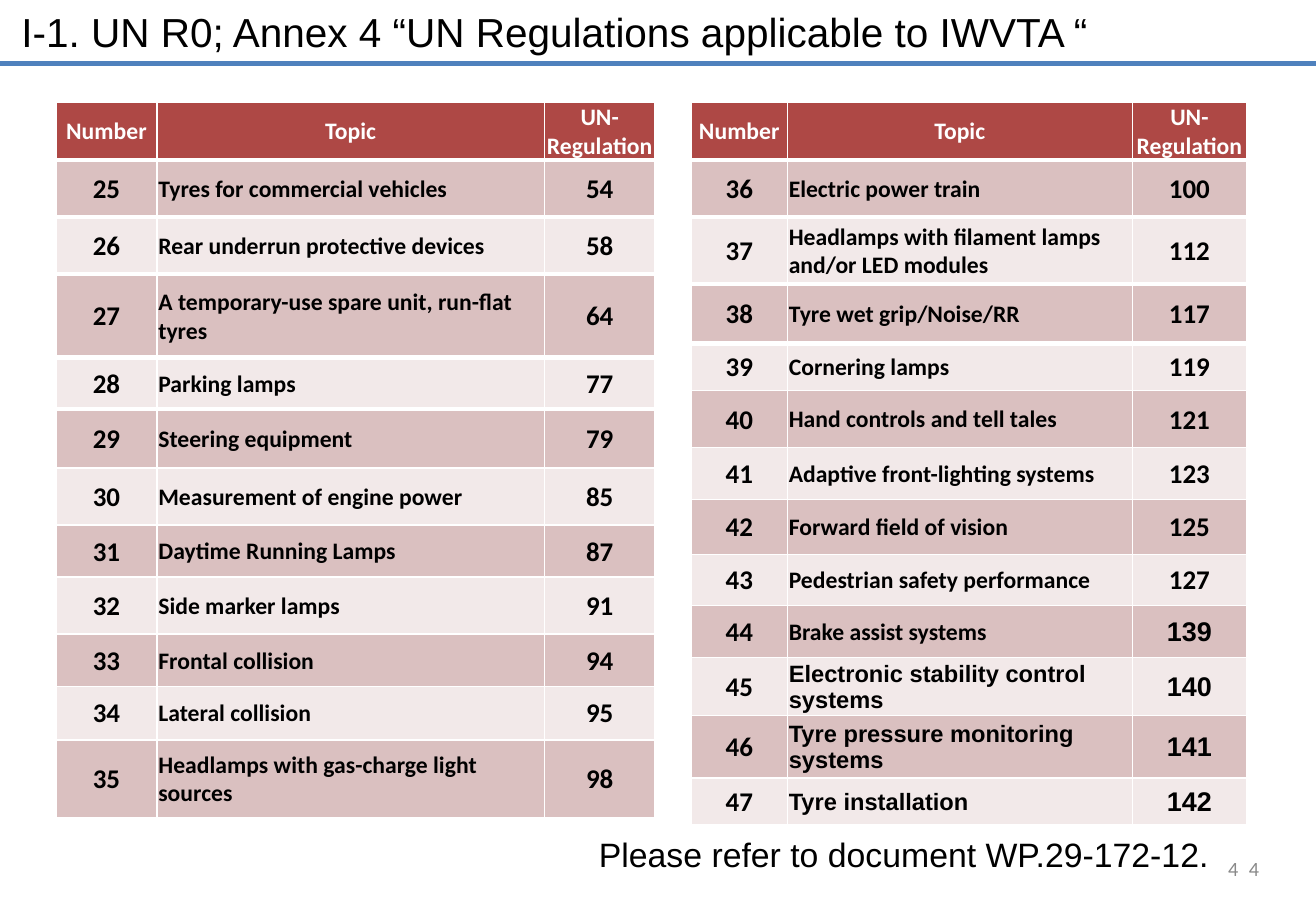
from lxml.etree import SubElement
from pptx import Presentation
from pptx.dml.color import RGBColor as RGB
from pptx.enum.shapes import MSO_CONNECTOR as CONN
from pptx.enum.text import MSO_ANCHOR as ANCHOR, PP_ALIGN as ALIGN
from pptx.oxml.ns import qn
from pptx.util import Cm, Pt

COLORS = {"rule": "4F81BD", "header": "AE4845", "odd": "DAC0C0", "even": "F2E9E9",
          "white": "FFFFFF", "black": "000000", "grey": "898989"}
WIDTH, HEIGHT = 27.51, 19.05
HEADER = ("Number", "Topic", "UN-Regulation", 1.22)
LEFT_ROWS = [
    ("25", "Tyres for commercial vehicles", "54", 1.19),
    ("26", "Rear underrun protective devices", "58", 1.19),
    ("27", "A temporary-use spare unit, run-flat tyres", "64", 1.75),
    ("28", "Parking lamps", "77", 1.07),
    ("29", "Steering equipment", "79", 1.24),
    ("30", "Measurement of engine power", "85", 1.19),
    ("31", "Daytime Running Lamps", "87", 1.09),
    ("32", "Side marker lamps", "91", 1.19),
    ("33", "Frontal collision", "94", 1.09),
    ("34", "Lateral collision", "95", 1.12),
    ("35", "Headlamps with gas-charge light sources", "98", 1.63),
]
RIGHT_ROWS = [
    ("36", "Electric power train", "100", 1.19),
    ("37", "Headlamps with filament lamps and/or LED modules", "112", 1.4),
    ("38", "Tyre wet grip/Noise/RR", "117", 1.24),
    ("39", "Cornering lamps", "119", 0.99),
    ("40", "Hand controls and tell tales", "121", 1.19),
    ("41", "Adaptive front-lighting systems", "123", 1.09),
    ("42", "Forward field of vision", "125", 1.14),
    ("43", "Pedestrian safety performance", "127", 1.07),
    ("44", "Brake assist systems", "139", 1.09),
    ("45", "Electronic stability control systems", "140", 0.99),
    ("46", "Tyre pressure monitoring systems", "141", 1.3),
    ("47", "Tyre installation", "142", 0.99),
]
ARIAL_CELLS = {"139", "140", "141", "142"} | {row[1] for row in RIGHT_ROWS[-3:]}


def style_text(tf, text, size, font, color, align=ALIGN.LEFT, bold=False):
    """Put one formatted paragraph into a text frame."""
    tf.text = text
    tf.word_wrap = True
    p = tf.paragraphs[0]
    p.alignment = align
    r = p.runs[0]
    r.font.size, r.font.name, r.font.bold = Pt(size), font, bold
    r.font.color.rgb = RGB.from_string(COLORS[color])


def add_label(slide, box, text, size, font="Arial", color="black",
              align=ALIGN.LEFT, anchor=ANCHOR.TOP):
    """Add a text box that fills the given box."""
    tf = slide.shapes.add_textbox(*map(Cm, box)).text_frame
    style_text(tf, text, size, font, color, align)
    tf.vertical_anchor = anchor


def add_title(slide, box):
    """Add the slide title with the rule beneath it."""
    x, y, w, h = box
    rule_y = Cm(y + h)
    line = slide.shapes.add_connector(CONN.STRAIGHT, Cm(x), rule_y, Cm(x + w), rule_y)
    line.line.color.rgb = RGB.from_string(COLORS["rule"])
    line.line.width = Pt(3)
    SubElement(line._element.spPr, qn("a:effectLst"))
    add_label(slide, (x + 0.2, y + 0.03, w - 1.12, h - 0.05),
              "I-1. UN R0; Annex 4 “UN Regulations applicable to IWVTA “", 24)


def set_borders(cell, top, bottom):
    """Give a cell white borders with the given top and bottom widths."""
    tcPr = cell._tc.get_or_add_tcPr()
    for side, width in (("L", 1), ("R", 1), ("T", top), ("B", bottom)):
        ln = SubElement(tcPr, qn(f"a:ln{side}"), w=str(Pt(width)))
        fill = SubElement(ln, qn("a:solidFill"))
        SubElement(fill, qn("a:srgbClr"), val=COLORS["white"])


def fill_cell(cell, text, is_topic, is_header, fill):
    """Write and colour one table cell."""
    cell.fill.solid()
    cell.fill.fore_color.rgb = RGB.from_string(COLORS[fill])
    cell.margin_left = cell.margin_right = cell.margin_top = Cm(0.03)
    cell.margin_bottom = 0
    cell.vertical_anchor = ANCHOR.MIDDLE
    style_text(cell.text_frame, text, 14 if is_topic or is_header else 16,
               "Arial" if text in ARIAL_CELLS else "Calibri",
               "white" if is_header else "black",
               ALIGN.LEFT if is_topic and not is_header else ALIGN.CENTER, True)


def add_regulations(slide, box, widths, body, rules):
    """Add a regulation table whose rows end in rules of the given widths."""
    rows = [HEADER, *body]
    table = slide.shapes.add_table(len(rows), len(widths), *map(Cm, box)).table
    table.horz_banding = False
    for column, width in zip(table.columns, widths):
        column.width = Cm(width)
    for i, (*texts, height) in enumerate(rows):
        table.rows[i].height = Cm(height)
        fill = "header" if i == 0 else "odd" if i % 2 else "even"
        for j, text in enumerate(texts):
            cell = table.cell(i, j)
            set_borders(cell, rules[i - 1] if i else 1, rules[i])
            fill_cell(cell, text, j == 1, i == 0, fill)


def add_footer(slide, box):
    """Add the document reference and the two page numbers."""
    x, y, w, h = box
    add_label(slide, (x, y, 14, h), "Please refer to document WP.29-172-12.", 20)
    for right in (w - 0.43, w):
        add_label(slide, (x + right - 6.43, y + 0.33, 6.43, 1.02), "4", 12,
                  "Calibri", "grey", ALIGN.RIGHT, ANCHOR.MIDDLE)


def main():
    """Build the slide and save it."""
    prs = Presentation()
    prs.slide_width, prs.slide_height = Cm(WIDTH), Cm(HEIGHT)
    slide = prs.slides.add_slide(prs.slide_layouts[6])
    add_title(slide, (0, 0, WIDTH, 1.32))
    add_regulations(slide, (1.17, 2.13, 12.52, 15.01), (2.11, 8.1, 2.31),
                    LEFT_ROWS, [3] * 5 + [1] * 7)
    add_regulations(slide, (14.45, 2.13, 11.61, 14.94), (2.01, 7.21, 2.39),
                    RIGHT_ROWS, [3] * 4 + [0.75] * 5 + [1] * 4)
    add_footer(slide, (12.27, 17.32, 14.3, 1.12))
    prs.save("out.pptx")


if __name__ == "__main__":
    main()
